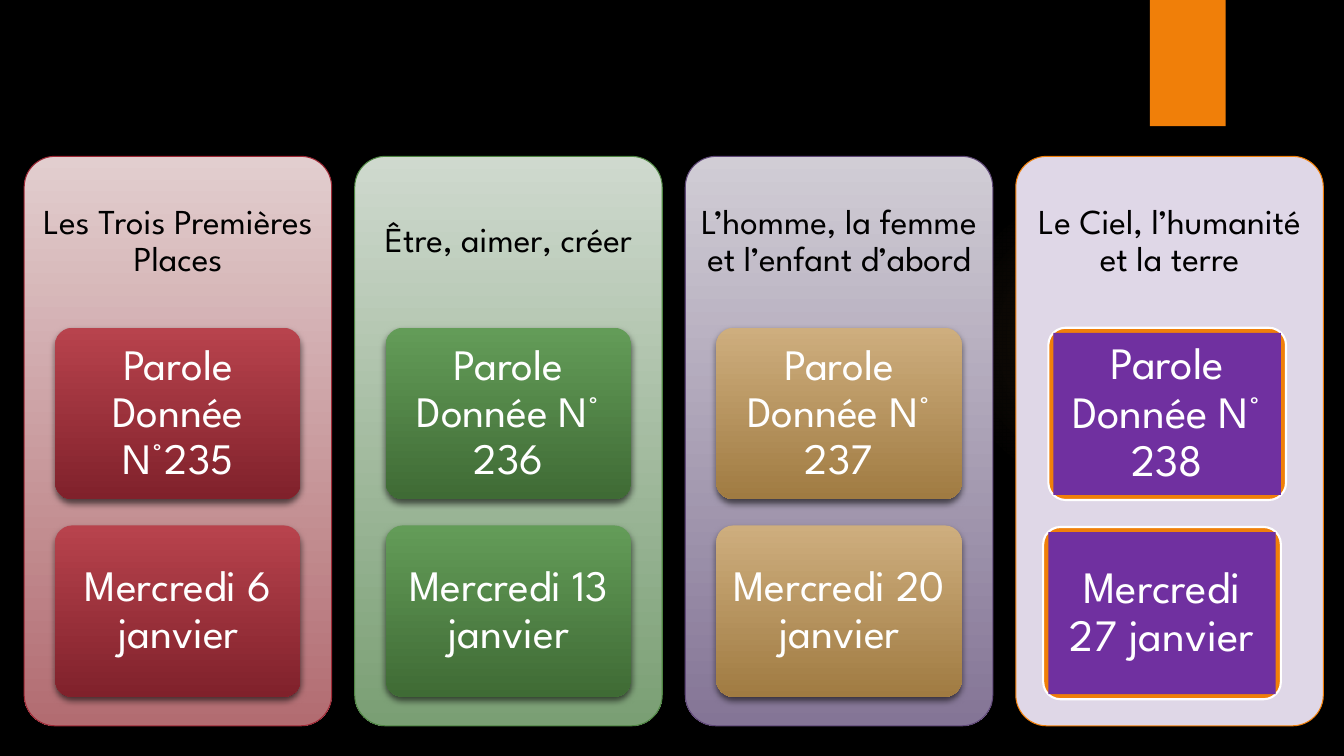
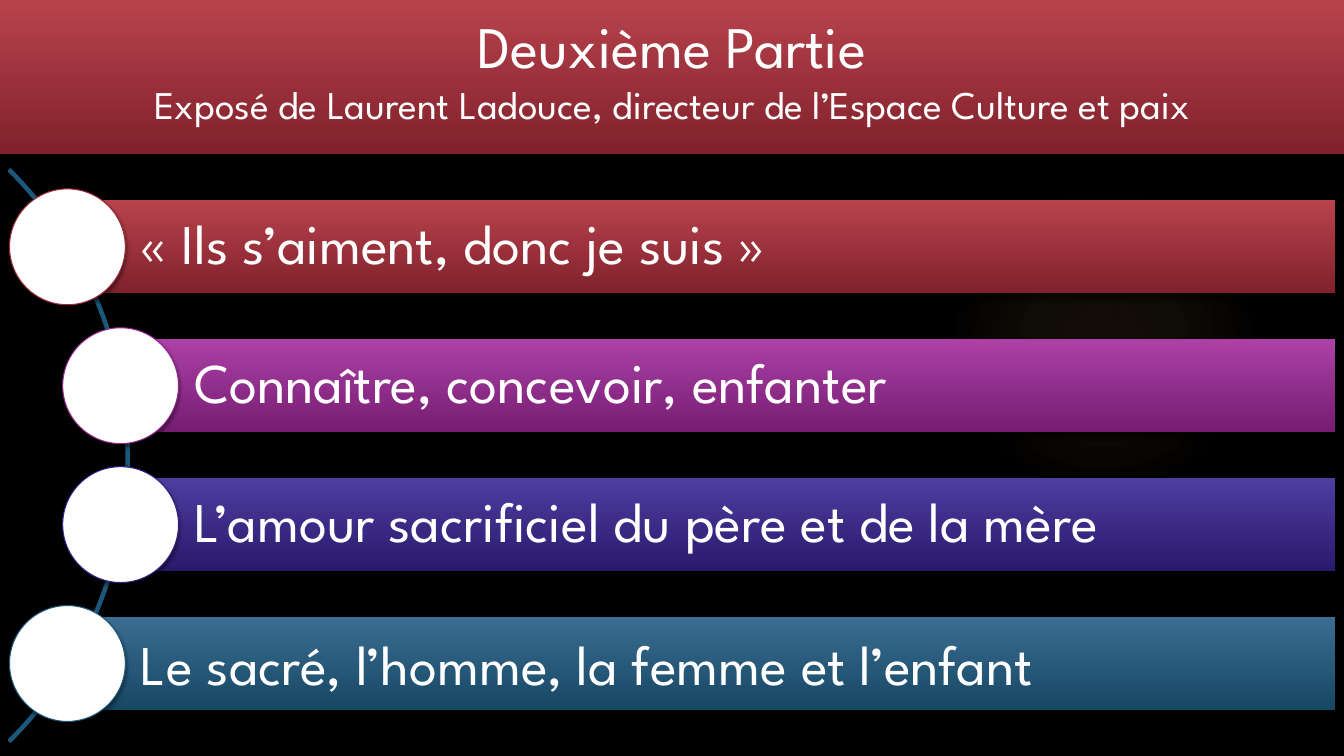
from pptx import Presentation
from pptx.dml.color import RGBColor
from pptx.enum.shapes import MSO_SHAPE
from pptx.enum.text import MSO_ANCHOR, MSO_AUTO_SIZE, PP_ALIGN
from pptx.oxml import parse_xml
from pptx.oxml.ns import nsdecls, qn
from pptx.util import Cm, Pt

FONT = "League Spartan"
SLIDE_W, SLIDE_H = 33.87, 19.05
SOFT = (45, 3, 2)
DEEP = (60, 5, 3)
COLORS = {
    "black": "000000", "white": "FFFFFF", "orange": "F07F09", "glow": "F9B268",
    "purple": "7030A0", "lilac": "DFD7E7",
    "red": "9F2936", "green": "4E8542", "violet": "604878",
    "magenta": "94248E", "indigo": "351F88", "blue": "1B587C",
    "red_hi": "B8434D", "red_lo": "80212B",
    "green_hi": "639C58", "green_lo": "3F6B35",
    "tan_hi": "CEAE7E", "tan_lo": "A07B42",
    "magenta_hi": "AC40A6", "magenta_lo": "761D72",
    "indigo_hi": "4D3D9F", "indigo_lo": "2B196D",
    "blue_hi": "3B6D92", "blue_lo": "164763",
    "rose_hi": "E2CECF", "rose_lo": "B26C71",
    "sage_hi": "CFD9CE", "sage_lo": "7A9F74",
    "mauve_hi": "D1CDD5", "mauve_lo": "847596",
}
COLUMNS = [
    ("Les Trois Premières Places", "rose", "red", "red",
     ("Parole Donnée N°235", "Mercredi 6 janvier")),
    ("Être, aimer, créer", "sage", "green", "green",
     ("Parole Donnée N° 236", "Mercredi 13 janvier")),
    ("L’homme, la femme et l’enfant d’abord", "mauve", "violet", "tan",
     ("Parole Donnée N° 237", "Mercredi 20 janvier")),
    ("Le Ciel, l’humanité et la terre", "lilac", "orange", None,
     ("Parole Donnée N° 238", "Mercredi 27 janvier")),
]
TOPICS = [
    ("« Ils s’aiment, donc je suis »", "red", 1.7, 0.9),
    ("Connaître, concevoir, enfanter", "magenta", 3.04, 0.9),
    ("L’amour sacrificiel du père et de la mère", "indigo", 3.04, 0.9),
    ("Le sacré, l’homme, la femme et l’enfant", "blue", 1.7, 1.0),
]


def rgb(name):
    """Return the named colour."""
    return RGBColor.from_string(COLORS[name])


def paint(sp, fill):
    """Fill a shape with a plain colour or a vertical hi-lo gradient."""
    if fill is None:
        sp.fill.background()
    elif fill in COLORS and fill + "_hi" not in COLORS:
        sp.fill.solid()
        sp.fill.fore_color.rgb = rgb(fill)
    else:
        sp.fill.gradient()
        sp.fill.gradient_angle = 270
        for stop, end in zip(sp.fill.gradient_stops, ("_hi", "_lo")):
            stop.color.rgb = rgb(fill + end)


def cast_shadow(sp, shadow):
    """Give a shape a downward shadow of (opacity, blur, distance), or none."""
    sp.shadow.inherit = False
    if shadow:
        alpha, blur, dist = shadow
        sp.element.spPr.find(qn("a:effectLst")).append(parse_xml(
            f'<a:outerShdw {nsdecls("a")} blurRad="{Pt(blur)}" dist="{Pt(dist)}" '
            f'dir="5400000" algn="ctr" rotWithShape="0"><a:srgbClr val="{COLORS["black"]}">'
            f'<a:alpha val="{alpha * 1000}"/></a:srgbClr></a:outerShdw>'))


def add_box(s, kind, box, fill, line=None, weight=0.75, shadow=None, adj=()):
    """Add a preset shape; box is left, top, width, height in cm."""
    sp = s.shapes.add_shape(kind, *map(Cm, box))
    paint(sp, fill)
    if line:
        sp.line.color.rgb = rgb(line)
        sp.line.width = Pt(weight)
    else:
        sp.line.fill.background()
    cast_shadow(sp, shadow)
    for i, value in enumerate(adj):
        sp.adjustments[i] = value
    return sp


def format_text(p, size, color, align, spacing=None):
    """Format a paragraph and its runs."""
    p.alignment = align
    p.line_spacing = spacing
    for r in p.runs:
        r.font.name = FONT
        r.font.size = Pt(size)
        r.font.color.rgb = rgb(color)


def write(sp, text, size, color="white", align=PP_ALIGN.CENTER, spacing=0.9,
          insets=(0.23, 0.16, 0.23, 0.16)):
    """Write one vertically centred paragraph into a shape."""
    tf = sp.text_frame
    tf.word_wrap = True
    tf.vertical_anchor = MSO_ANCHOR.MIDDLE
    tf.margin_left, tf.margin_top, tf.margin_right, tf.margin_bottom = map(Cm, insets)
    tf.text = text
    format_text(tf.paragraphs[0], size, color, align, spacing)


def style_master(prs, s):
    """Put the black background, the glow and the orange tab on the master."""
    master = prs.slide_master
    master.background.fill.solid()
    master.background.fill.fore_color.rgb = rgb("black")
    glow = add_box(s, MSO_SHAPE.OVAL, (23.9, 4.65, 7.82, 7.82), None)
    spPr = glow.element.spPr
    stops = "".join(
        f'<a:gs pos="{pos}000"><a:srgbClr val="{COLORS["glow"]}">'
        f'<a:alpha val="{alpha}000"/></a:srgbClr></a:gs>'
        for pos, alpha in ((0, 7), (36, 6), (69, 0)))
    spPr.replace(spPr.find(qn("a:noFill")), parse_xml(
        f'<a:gradFill {nsdecls("a")} rotWithShape="1"><a:gsLst>{stops}</a:gsLst>'
        '<a:path path="circle"><a:fillToRect l="50000" t="50000" r="50000" b="50000"/>'
        '</a:path></a:gradFill>'))
    tab = add_box(s, MSO_SHAPE.RECTANGLE, (28.98, 0, 1.91, 3.18), "orange", shadow=SOFT)
    for i, sp in enumerate((glow, tab)):
        master.shapes.element.insert(2 + i, sp.element)


def add_card(s, left, top, text, fill):
    """Add a gradient card with its text."""
    sp = add_box(s, MSO_SHAPE.ROUNDED_RECTANGLE, (left, top, 6.19, 4.32), fill,
                 shadow=DEEP, adj=[0.1])
    write(sp, text, 31)


def add_framed_card(s, left, top, text):
    """Add a purple card in a rounded orange frame."""
    w, h, rim = 5.99, 4.34, 0.13
    add_box(s, MSO_SHAPE.ROUNDED_RECTANGLE, (left, top, w, h), "orange", "white", 1.5,
            adj=[0.1])
    sp = add_box(s, MSO_SHAPE.RECTANGLE,
                 (left + rim, top + rim, w - 2 * rim, h - 2 * rim), "purple")
    write(sp, text, 32, insets=(0.23, 0.18, 0.23, 0.18))


def add_column(s, left, title, panel, edge, card, texts):
    """Add a panel with its heading and two cards."""
    top, w = 3.94, 7.75
    add_box(s, MSO_SHAPE.ROUNDED_RECTANGLE, (left, top, w, 14.35), panel, edge, adj=[0.1])
    heading = s.shapes.add_textbox(*map(Cm, (left, top, w, 4.3)))
    write(heading, title, 25, "black", insets=[0.25] * 4)
    if card:
        for i, text in enumerate(texts):
            add_card(s, left + 0.78, 8.26 + 4.98 * i, text, card)
    else:
        for i, text in enumerate(texts):
            add_framed_card(s, left + 0.82 - 0.13 * i, 8.26 + 5.02 * i, text)


def add_topic(s, top, text, color, left, spacing):
    """Add a topic bar with a white disc on its left end."""
    h, disc = 2.34, 2.92
    bar = add_box(s, MSO_SHAPE.RECTANGLE, (left, top, 33.65 - left, h), color, shadow=DEEP)
    write(bar, text, 40, align=PP_ALIGN.LEFT, spacing=spacing,
          insets=(1.85, 0.28, 0.28, 0.28))
    add_box(s, MSO_SHAPE.OVAL, (left - disc / 2, top + (h - disc) / 2, disc, disc),
            "white", color, shadow=SOFT)


def set_title(s, lines):
    """Turn the title placeholder into the top band; lines are (text, size)."""
    sp = s.shapes.title
    sp.left, sp.top, sp.width, sp.height = map(Cm, (0, 0, SLIDE_W, 3.89))
    paint(sp, "red")
    cast_shadow(sp, DEEP)
    tf = sp.text_frame
    tf.auto_size = MSO_AUTO_SIZE.NONE
    tf.vertical_anchor = MSO_ANCHOR.TOP
    tf.margin_top = Cm(0.24)
    tf.text = "\n".join(text for text, _ in lines)
    for p, (_, size) in zip(tf.paragraphs, lines):
        format_text(p, size, "white", PP_ALIGN.CENTER)


def main():
    """Build the two slides."""
    prs = Presentation()
    prs.slide_width, prs.slide_height = Cm(SLIDE_W), Cm(SLIDE_H)

    s = prs.slides.add_slide(prs.slide_layouts[6])
    style_master(prs, s)
    for i, column in enumerate(COLUMNS):
        add_column(s, 0.61 + 8.33 * i, *column)

    s = prs.slides.add_slide(prs.slide_layouts[5])
    set_title(s, [("Deuxième Partie", 42),
                  ("Exposé de Laurent Ladouce, directeur de l’Espace Culture et paix", 28)])
    add_box(s, MSO_SHAPE.BLOCK_ARC, (-17.15, 1.28, 20.4, 20.4), None, "blue", 1.5,
            adj=(189, 27, 0.003))
    for i, topic in enumerate(TOPICS):
        add_topic(s, 5.05 + 3.5 * i, *topic)

    prs.save("out.pptx")


if __name__ == "__main__":
    main()
